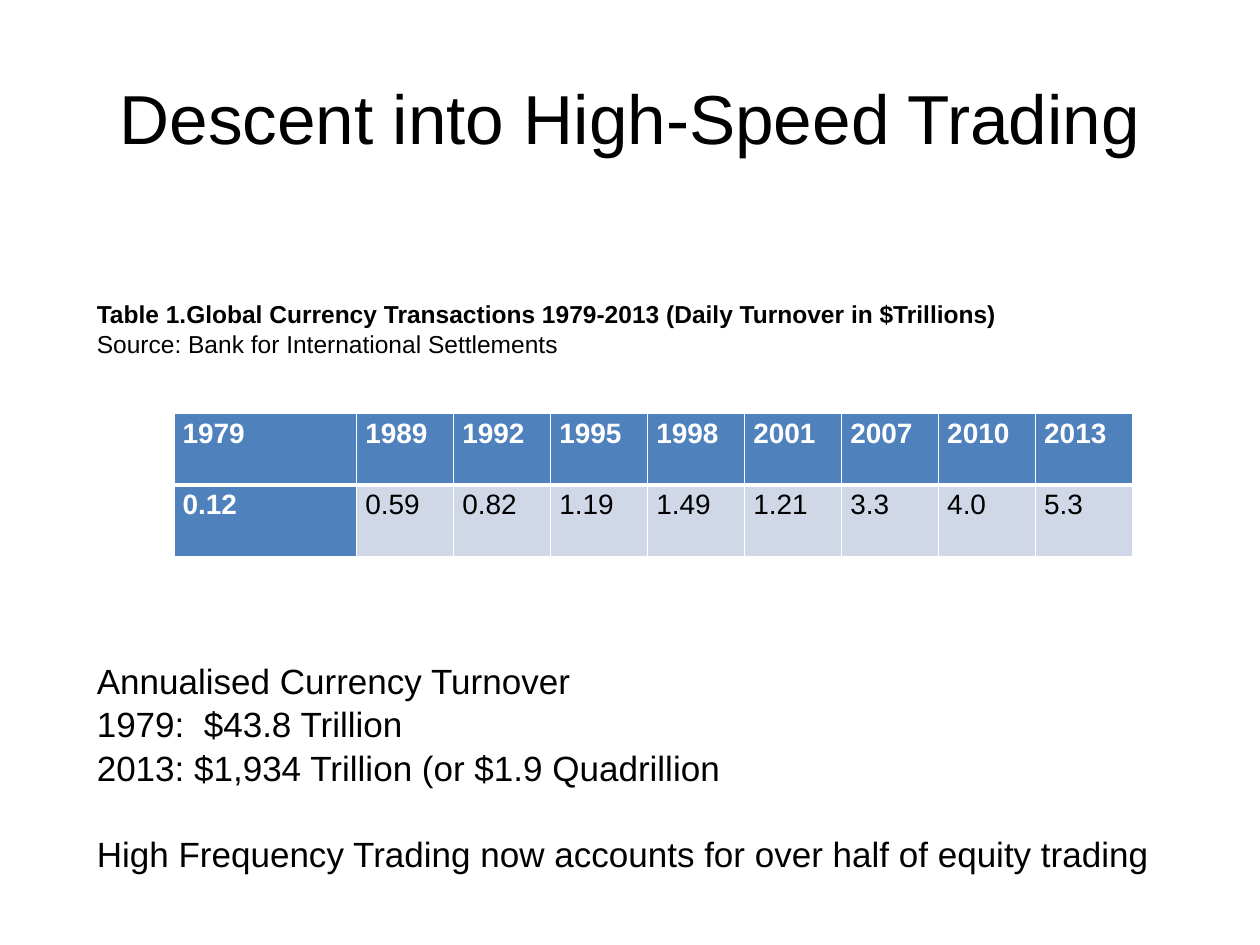
from dataclasses import dataclass

from lxml.etree import SubElement
from pptx import Presentation
from pptx.dml.color import RGBColor
from pptx.enum.text import MSO_ANCHOR as Anchor, PP_ALIGN as Align
from pptx.oxml.ns import qn
from pptx.util import Inches, Pt


@dataclass(frozen=True)
class Theme:
    font: str = "Arial"
    black: str = "000000"
    white: str = "FFFFFF"
    header_fill: str = "4F81BD"
    value_fill: str = "D0D8E8"
    title_size: float = 39.6
    caption_size: int = 14
    table_size: int = 16
    note_size: int = 20
    line_spacing: float = 1.04


@dataclass(frozen=True)
class Line:
    text: str
    bold: bool = False
    space_before: int = 0


@dataclass(frozen=True)
class TextBlock:
    top: float
    height: float
    size: int
    anchor: Anchor
    lines: tuple[Line, ...]


THEME = Theme()
BLOCK_LEFT, BLOCK_WIDTH = 0.67, 8.66

CAPTION = TextBlock(2.32, 0.57, THEME.caption_size, Anchor.MIDDLE, (
    Line("Table 1.Global Currency Transactions 1979-2013 (Daily Turnover in $Trillions)", bold=True),
    Line("Source: Bank for International Settlements"),
))
NOTES = TextBlock(5.17, 1.78, THEME.note_size, Anchor.TOP, (
    Line("Annualised Currency Turnover"),
    Line("1979:  $43.8 Trillion"),
    Line("2013: $1,934 Trillion (or $1.9 Quadrillion"),
    Line("High Frequency Trading now accounts for over half of equity trading", space_before=24),
))
TURNOVER = (
    ("1979", "1989", "1992", "1995", "1998", "2001", "2007", "2010", "2013"),
    ("0.12", "0.59", "0.82", "1.19", "1.49", "1.21", "3.3", "4.0", "5.3"),
)


def style_font(paragraph, size: float, color: str, bold: bool = False) -> None:
    font = paragraph.font
    font.name, font.size, font.bold = THEME.font, Pt(size), bold
    font.color.rgb = RGBColor.from_string(color)


def add_text_block(slide, block: TextBlock) -> None:
    box = slide.shapes.add_textbox(Inches(BLOCK_LEFT), Inches(block.top),
                                   Inches(BLOCK_WIDTH), Inches(block.height))
    frame = box.text_frame
    frame.word_wrap = True
    frame.vertical_anchor = block.anchor
    for index, line in enumerate(block.lines):
        paragraph = frame.add_paragraph() if index else frame.paragraphs[0]
        paragraph.text = line.text
        paragraph.line_spacing = THEME.line_spacing
        paragraph.space_before = Pt(line.space_before)
        style_font(paragraph, block.size, THEME.black, line.bold)


def add_borders(cell, widths: dict[str, int]) -> None:
    properties = cell._tc.get_or_add_tcPr()
    for side, width in widths.items():
        border = SubElement(properties, qn(f"a:ln{side}"), w=str(Pt(width)))
        fill = SubElement(border, qn("a:solidFill"))
        SubElement(fill, qn("a:srgbClr"), val=THEME.white)


def style_cell(cell, text: str, is_header: bool, borders: dict[str, int]) -> None:
    cell.margin_left = cell.margin_right = Inches(0.07)
    cell.margin_top = cell.margin_bottom = 0
    add_borders(cell, borders)
    cell.fill.solid()
    cell.fill.fore_color.rgb = RGBColor.from_string(
        THEME.header_fill if is_header else THEME.value_fill)
    paragraph = cell.text_frame.paragraphs[0]
    paragraph.text = text
    paragraph.alignment = Align.JUSTIFY
    paragraph.line_spacing = 1.15
    style_font(paragraph, THEME.table_size,
               THEME.white if is_header else THEME.black, is_header)


def add_turnover_table(slide) -> None:
    table = slide.shapes.add_table(
        len(TURNOVER), len(TURNOVER[0]),
        Inches(1.38), Inches(3.28), Inches(7.64), Inches(1.14)).table
    table.first_row = table.horz_banding = False
    for index, column in enumerate(table.columns):
        column.width = Inches(0.77 if index else 1.45)
    for row_index, values in enumerate(TURNOVER):
        table.rows[row_index].height = Inches(0.57)
        # The thick rule lies between the years and the values
        borders = {"L": 1, "R": 1, "T": 3 if row_index else 1, "B": 1 if row_index else 3}
        for column_index, value in enumerate(values):
            is_header = row_index == 0 or column_index == 0
            style_cell(table.cell(row_index, column_index), value, is_header, borders)


def main() -> None:
    presentation = Presentation()
    presentation.slide_width, presentation.slide_height = Inches(10), Inches(7.5)
    slide = presentation.slides.add_slide(presentation.slide_layouts[5])

    # Title
    title = slide.shapes.title
    title.left, title.top = Inches(0.5), Inches(0.3)
    title.width, title.height = Inches(9), Inches(1.25)
    title.text_frame.text = "Descent into High-Speed Trading"
    title.text_frame.vertical_anchor = Anchor.MIDDLE
    heading = title.text_frame.paragraphs[0]
    heading.alignment = Align.CENTER
    style_font(heading, THEME.title_size, THEME.black)

    # Turnover table with its caption, then the notes below
    add_turnover_table(slide)
    add_text_block(slide, CAPTION)
    add_text_block(slide, NOTES)

    presentation.save("out.pptx")


if __name__ == "__main__":
    main()
